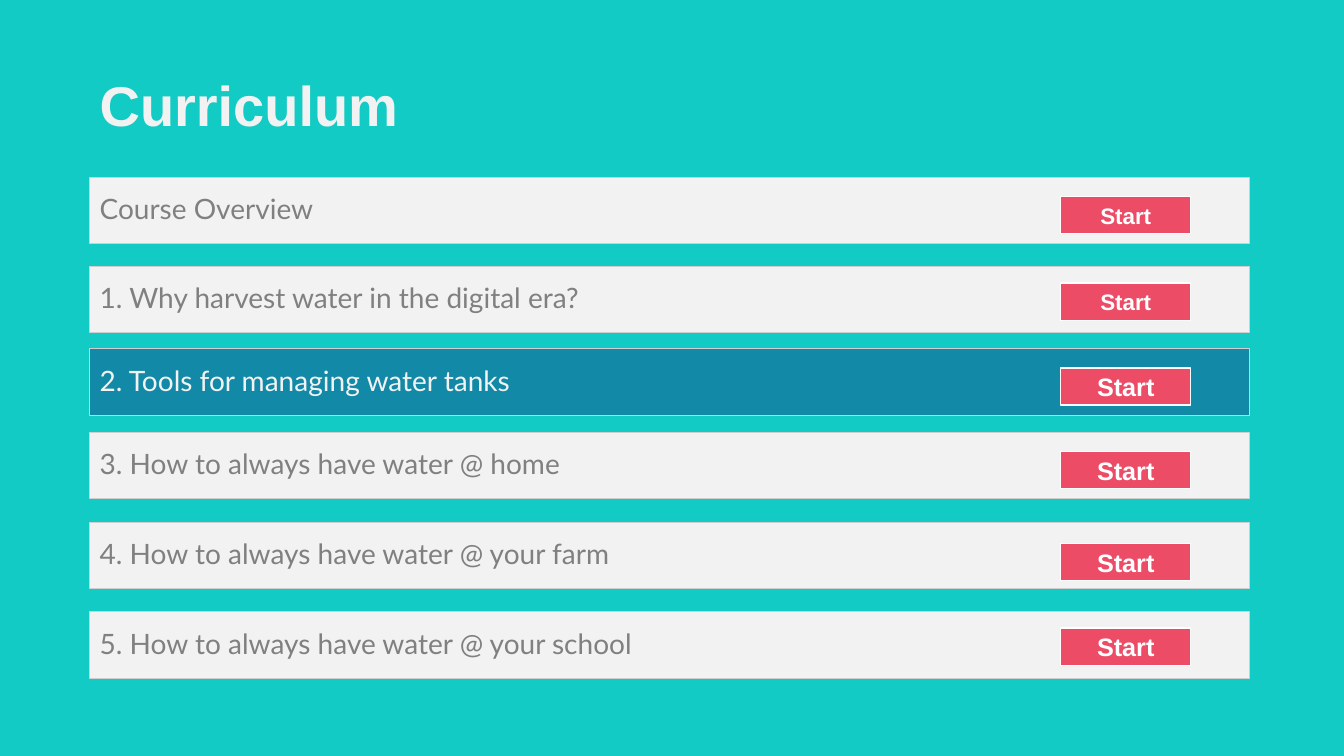
from dataclasses import dataclass

from pptx import Presentation
from pptx.dml.color import RGBColor
from pptx.enum.shapes import MSO_SHAPE
from pptx.enum.text import MSO_ANCHOR, PP_ALIGN
from pptx.util import Inches, Pt

RECTANGLE = MSO_SHAPE.RECTANGLE
MIDDLE = MSO_ANCHOR.MIDDLE
LEFT, CENTER = PP_ALIGN.LEFT, PP_ALIGN.CENTER


@dataclass(frozen=True)
class Theme:
    background: str = "12CBC4"
    light: str = "F2F2F2"
    lesson_text: str = "808080"
    lesson_border: str = "D0CECE"
    current: str = "1289A7"
    button: str = "ED4C67"
    white: str = "FFFFFF"
    heading_font: str = "Arial"
    lesson_font: str = "Lato"
    title_size: int = 40
    lesson_size: int = 20
    small_button_size: int = 16
    button_size: int = 18


THEME = Theme()

MARGIN, CONTENT_WIDTH = 0.89, 11.5
LESSON_HEIGHT = 0.66
BUTTON_LEFT, BUTTON_WIDTH, BUTTON_HEIGHT = 10.52, 1.29, 0.37

# Lesson title, lesson top, button top, button text size
LESSONS = [
    ("Course Overview", 1.76, 1.95, THEME.small_button_size),
    ("1. Why harvest water in the digital era?", 2.64, 2.81, THEME.small_button_size),
    ("2. Tools for managing water tanks", 3.46, 3.65, THEME.button_size),
    ("3. How to always have water @ home", 4.29, 4.48, THEME.button_size),
    ("4. How to always have water @ your farm", 5.18, 5.39, THEME.button_size),
    ("5. How to always have water @ your school", 6.07, 6.23, THEME.button_size),
]
CURRENT_LESSON = 2


def rgb(color):
    return RGBColor.from_string(color)


def write(shape, text, font, size, color, bold=False, align=LEFT, spacing=0.9):
    frame = shape.text_frame
    frame.word_wrap = True
    frame.vertical_anchor = MIDDLE
    paragraph = frame.paragraphs[0]
    paragraph.text = text
    paragraph.alignment = align
    paragraph.line_spacing = spacing
    paragraph.font.name = font
    paragraph.font.size = Pt(size)
    paragraph.font.bold = bold
    paragraph.font.color.rgb = rgb(color)


def add_bar(slide, left, top, width, height, fill, border, border_width):
    bar = slide.shapes.add_shape(
        RECTANGLE, Inches(left), Inches(top), Inches(width), Inches(height))
    bar.shadow.inherit = False
    bar.fill.solid()
    bar.fill.fore_color.rgb = rgb(fill)
    bar.line.color.rgb = rgb(border)
    bar.line.width = Pt(border_width)
    return bar


def add_title(slide, text):
    title = slide.shapes.add_textbox(
        Inches(MARGIN), Inches(0.69), Inches(CONTENT_WIDTH), Inches(0.77))
    write(title, text, THEME.heading_font, THEME.title_size, THEME.light, bold=True)


def add_lesson(slide, text, top, is_current):
    fill = THEME.current if is_current else THEME.light
    color = THEME.light if is_current else THEME.lesson_text
    lesson = add_bar(slide, MARGIN, top, CONTENT_WIDTH, LESSON_HEIGHT,
                     fill, THEME.lesson_border, 0.75)
    write(lesson, text, THEME.lesson_font, THEME.lesson_size, color)


def add_start_button(slide, top, size):
    button = add_bar(slide, BUTTON_LEFT, top, BUTTON_WIDTH, BUTTON_HEIGHT,
                     THEME.button, THEME.white, 1)
    write(button, "Start", THEME.heading_font, size, THEME.white,
          bold=True, align=CENTER, spacing=1.0)


def main():
    deck = Presentation()
    deck.slide_width, deck.slide_height = Inches(13.33), Inches(7.5)
    slide = deck.slides.add_slide(deck.slide_layouts[6])
    slide.background.fill.solid()
    slide.background.fill.fore_color.rgb = rgb(THEME.background)

    add_title(slide, "Curriculum")
    for number, (text, top, button_top, button_size) in enumerate(LESSONS):
        add_lesson(slide, text, top, number == CURRENT_LESSON)
        add_start_button(slide, button_top, button_size)

    deck.save("out.pptx")


if __name__ == "__main__":
    main()
